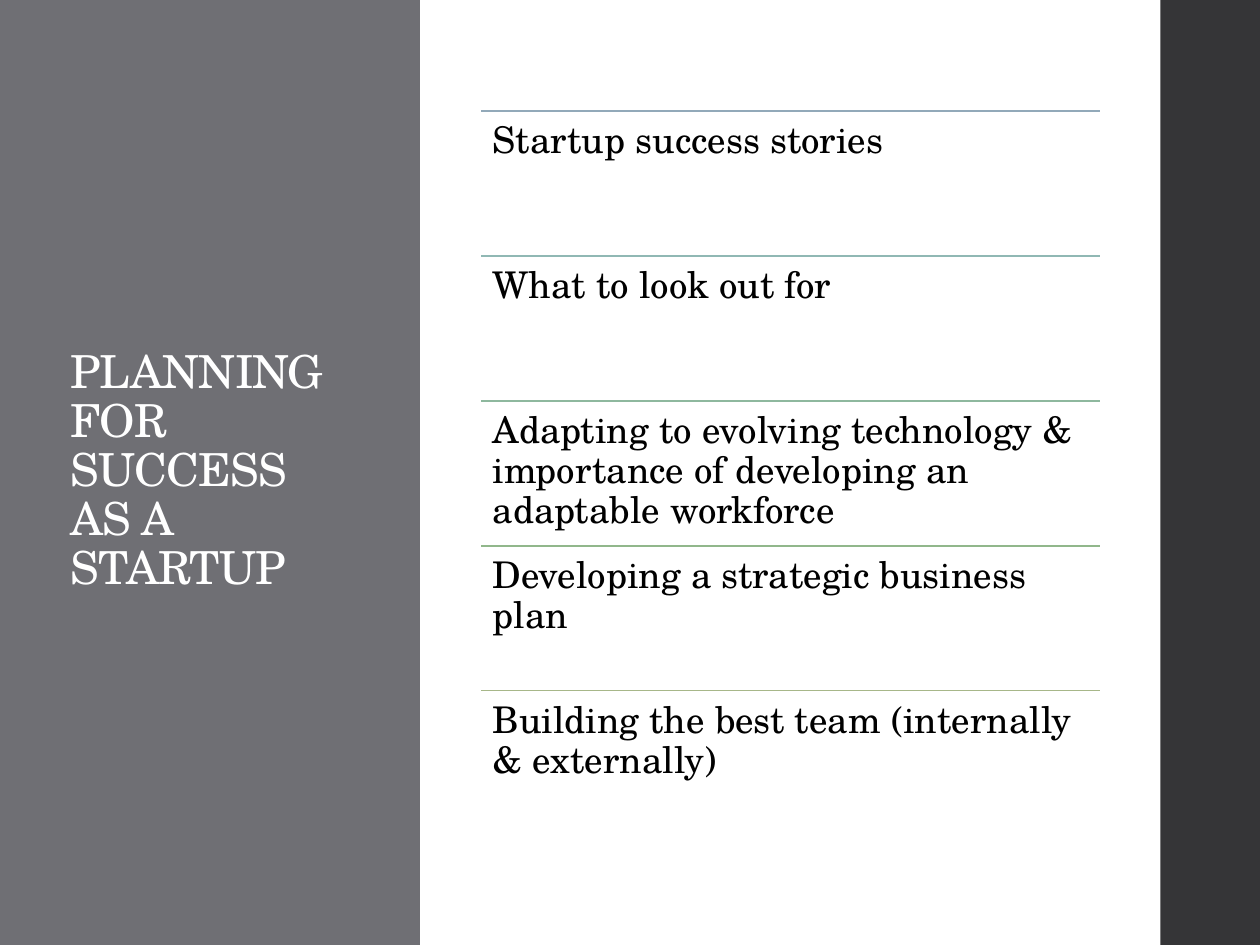
from dataclasses import dataclass

from lxml import etree
from pptx import Presentation, util as u
from pptx.dml.color import RGBColor
from pptx.enum import shapes, text
from pptx.oxml.ns import qn


@dataclass(frozen=True)
class Theme:
    font: str = "TeX Gyre Schola"
    panel: str = "6F6F74"
    edge: str = "353537"
    title: str = "FFFFFF"
    body: str = "000000"
    title_size: float = 26
    body_size: float = 21
    rule_width: float = 1.1
    line_spacing: float = 0.9


THEME = Theme()
WIDTH, HEIGHT = 10, 7.5

# Agenda grid: one column of equal rows
LEFT, TOP = 3.82, 0.88
COLUMN, ROW = 4.91, 1.15

AGENDA = [
    ("Startup success stories", "92A9B9"),
    ("What to look out for", "90B8B4"),
    ("Adapting to evolving technology & importance of developing an "
     "adaptable workforce", "8EB89E"),
    ("Developing a strategic business plan", "91B78B"),
    ("Building the best team (internally & externally)", "A7B789"),
]


def rgb(value):
    return RGBColor.from_string(value)


def add_band(slide, left, width, color):
    """Full-height colour band."""
    sp = slide.shapes.add_shape(shapes.MSO_SHAPE.RECTANGLE, u.Inches(left), 0,
                                u.Inches(width), u.Inches(HEIGHT))
    sp.shadow.inherit = False
    sp.fill.solid()
    sp.fill.fore_color.rgb = rgb(color)
    sp.line.fill.background()


def add_text(slide, box, words, size, color, anchor, inset):
    """Wrapped text box with one run; returns the run."""
    tf = slide.shapes.add_textbox(*map(u.Inches, box)).text_frame
    tf.word_wrap = True
    tf.vertical_anchor = anchor
    tf.margin_left = tf.margin_right = u.Inches(inset)
    tf.margin_top = tf.margin_bottom = u.Inches(inset)
    p = tf.paragraphs[0]
    p.line_spacing = THEME.line_spacing
    r = p.add_run()
    r.text = words
    r.font.name = THEME.font
    r.font.size = u.Pt(size)
    r.font.color.rgb = rgb(color)
    return r


def add_rule(slide, top, color):
    """Thin line across the agenda column."""
    y = u.Inches(top)
    line = slide.shapes.add_connector(shapes.MSO_CONNECTOR.STRAIGHT,
                                      u.Inches(LEFT), y,
                                      u.Inches(LEFT + COLUMN), y)
    line.line.color.rgb = rgb(color)
    line.line.width = u.Pt(THEME.rule_width)
    etree.SubElement(line._element.spPr, qn("a:effectLst"))


def add_agenda(slide):
    for i, (words, color) in enumerate(AGENDA):
        top = TOP + i * ROW
        add_rule(slide, top, color)
        add_text(slide, (LEFT, top, COLUMN, ROW), words, THEME.body_size,
                 THEME.body, text.MSO_ANCHOR.TOP, 0.09)


def main():
    prs = Presentation()
    prs.slide_width, prs.slide_height = u.Inches(WIDTH), u.Inches(HEIGHT)
    slide = prs.slides.add_slide(prs.slide_layouts[6])

    # Side bands
    add_band(slide, 0, WIDTH / 3, THEME.panel)
    add_band(slide, 9.21, WIDTH - 9.21, THEME.edge)

    # Title, slightly tightened letter spacing
    title = add_text(slide, (0.46, 0.91, 2.23, 5.67),
                     "PLANNING FOR SUCCESS AS A STARTUP", THEME.title_size,
                     THEME.title, text.MSO_ANCHOR.MIDDLE, 0.1)
    title.font._element.set("spc", "-50")

    # Ruled agenda
    add_agenda(slide)

    prs.save("out.pptx")


if __name__ == "__main__":
    main()
